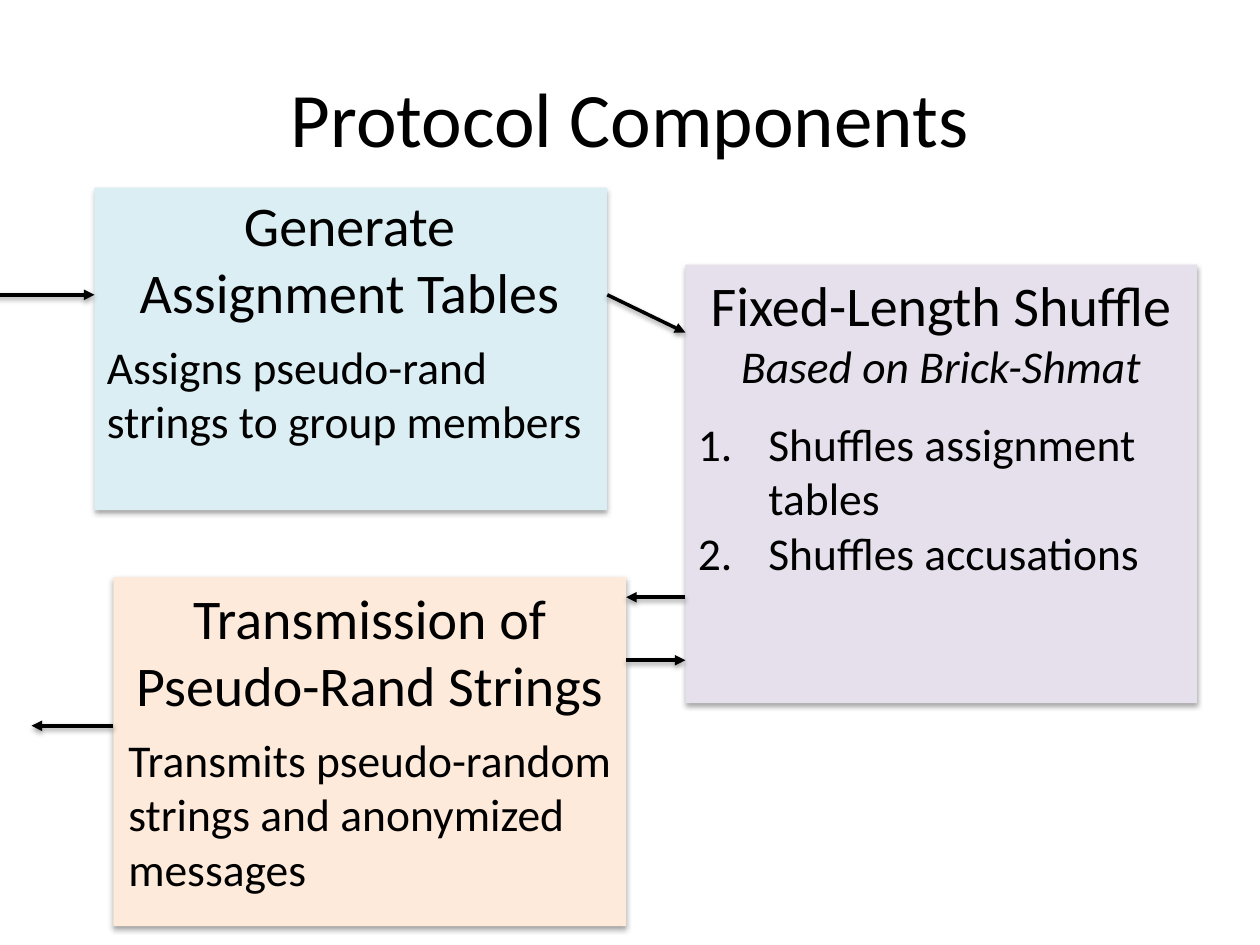
from dataclasses import dataclass

from pptx import Presentation
from pptx.dml.color import RGBColor
from pptx.enum.shapes import MSO_CONNECTOR as Connector, MSO_SHAPE as Shape
from pptx.enum.text import MSO_ANCHOR as Anchor, MSO_AUTO_SIZE as AutoSize, PP_ALIGN as Align
from pptx.oxml.ns import qn
from pptx.oxml.xmlchemy import OxmlElement
from pptx.util import Inches, Pt

COLORS = {
    "ink": "000000",
    "generate": "DBEEF4",
    "shuffle": "E6E0EC",
    "transmit": "FDEADA",
}
FONT = "Calibri"
HEADING_SIZE, BODY_SIZE = 32, 26
LIST_INDENT = Inches(0.56)


@dataclass(frozen=True)
class Line:
    text: str
    size: int = BODY_SIZE
    align: Align = Align.LEFT
    italic: bool = False
    numbered: bool = False


@dataclass(frozen=True)
class TextBlock:
    left: float
    top: float
    width: float
    height: float
    lines: tuple[Line, ...]


@dataclass(frozen=True)
class Component:
    color: str
    left: float
    top: float
    width: float
    height: float
    blocks: tuple[TextBlock, ...]


@dataclass(frozen=True)
class Flow:
    start: tuple[float, float]
    end: tuple[float, float]


def heading(text: str) -> Line:
    return Line(text, HEADING_SIZE, Align.CENTER)


COMPONENTS = (
    Component("shuffle", 5.44, 2.1, 4.06, 3.48, (
        TextBlock(5.44, 2.1, 4.06, 1.08, (
            heading("Fixed-Length Shuffle"),
            Line("Based on Brick-Shmat", align=Align.CENTER, italic=True),
        )),
        TextBlock(5.44, 3.25, 4.06, 1.41, (
            Line("Shuffles assignment tables", numbered=True),
            Line("Shuffles accusations", numbered=True),
        )),
    )),
    Component("generate", 0.75, 1.49, 4.07, 2.56, (
        TextBlock(0.74, 1.46, 4.07, 1.18, (heading("Generate Assignment Tables"),)),
        TextBlock(0.75, 2.64, 4.06, 0.98, (
            Line("Assigns pseudo-rand strings to group members"),
        )),
    )),
    Component("transmit", 0.9, 4.58, 4.07, 2.77, (
        TextBlock(0.9, 4.58, 4.07, 1.18, (heading("Transmission of Pseudo-Rand Strings"),)),
        TextBlock(0.92, 5.76, 4.05, 1.41, (
            Line("Transmits pseudo-random strings and anonymized messages"),
        )),
    )),
)

FLOWS = (
    Flow((-0.52, 2.34), (0.75, 2.34)),
    Flow((4.82, 2.34), (5.44, 2.64)),
    Flow((5.44, 4.74), (4.97, 4.74)),
    Flow((4.97, 5.24), (5.44, 5.24)),
    Flow((0.9, 5.76), (0.25, 5.76)),
)


def rgb(name: str) -> RGBColor:
    return RGBColor.from_string(COLORS[name])


def add_child(parent, tag: str, **attributes: str):
    child = OxmlElement(tag)
    for key, value in attributes.items():
        child.set(key, value)
    parent.append(child)
    return child


def add_shadow(properties, distance: float, opacity: int) -> None:
    effects = add_child(properties, "a:effectLst")
    shadow = add_child(effects, "a:outerShdw", blurRad=str(Pt(3.1)),
                       dist=str(Pt(distance)), dir="5400000", rotWithShape="0")
    shade = add_child(shadow, "a:srgbClr", val=COLORS["ink"])
    add_child(shade, "a:alpha", val=str(opacity * 1000))


def style_font(font, size: int, italic: bool = False) -> None:
    font.name = FONT
    font.size = Pt(size)
    font.italic = italic
    font.color.rgb = rgb("ink")


def draw_text(slide, block: TextBlock) -> None:
    frame = slide.shapes.add_textbox(
        Inches(block.left), Inches(block.top), Inches(block.width), Inches(block.height)
    ).text_frame
    frame.word_wrap = True
    frame.auto_size = AutoSize.SHAPE_TO_FIT_TEXT
    for index, line in enumerate(block.lines):
        paragraph = frame.add_paragraph() if index else frame.paragraphs[0]
        paragraph.text = line.text
        paragraph.alignment = line.align
        style_font(paragraph.font, line.size, line.italic)
        if line.numbered:
            layout = paragraph._p.get_or_add_pPr()
            layout.set("marL", str(LIST_INDENT))
            layout.set("indent", str(-LIST_INDENT))
            numbering = OxmlElement("a:buAutoNum")
            numbering.set("type", "arabicPeriod")
            layout.insert(0, numbering)


def draw_component(slide, component: Component) -> None:
    panel = slide.shapes.add_shape(
        Shape.RECTANGLE, Inches(component.left), Inches(component.top),
        Inches(component.width), Inches(component.height)
    )
    panel.fill.solid()
    panel.fill.fore_color.rgb = rgb(component.color)
    panel.line.fill.background()
    add_shadow(panel.element.spPr, 1.8, 35)
    for block in component.blocks:
        draw_text(slide, block)


def draw_flow(slide, flow: Flow) -> None:
    arrow = slide.shapes.add_connector(
        Connector.STRAIGHT, *(Inches(value) for value in flow.start + flow.end)
    )
    arrow.line.color.rgb = rgb("ink")
    arrow.line.width = Pt(2)
    properties = arrow.element.spPr
    add_child(properties.find(qn("a:ln")), "a:tailEnd", type="triangle")
    add_shadow(properties, 1.6, 38)


def draw_title(slide, text: str) -> None:
    title = slide.shapes.title
    title.left, title.top = Inches(0.5), Inches(0.3)
    title.width, title.height = Inches(9), Inches(1.25)
    title.text_frame.text = text
    title.text_frame.vertical_anchor = Anchor.MIDDLE
    paragraph = title.text_frame.paragraphs[0]
    paragraph.alignment = Align.CENTER
    style_font(paragraph.font, 44)


def main() -> None:
    deck = Presentation()
    deck.slide_width, deck.slide_height = Inches(10), Inches(7.5)
    slide = deck.slides.add_slide(deck.slide_layouts.get_by_name("Title Only"))
    draw_title(slide, "Protocol Components")
    for component in COMPONENTS:
        draw_component(slide, component)
    for flow in FLOWS:
        draw_flow(slide, flow)
    deck.save("out.pptx")


if __name__ == "__main__":
    main()
